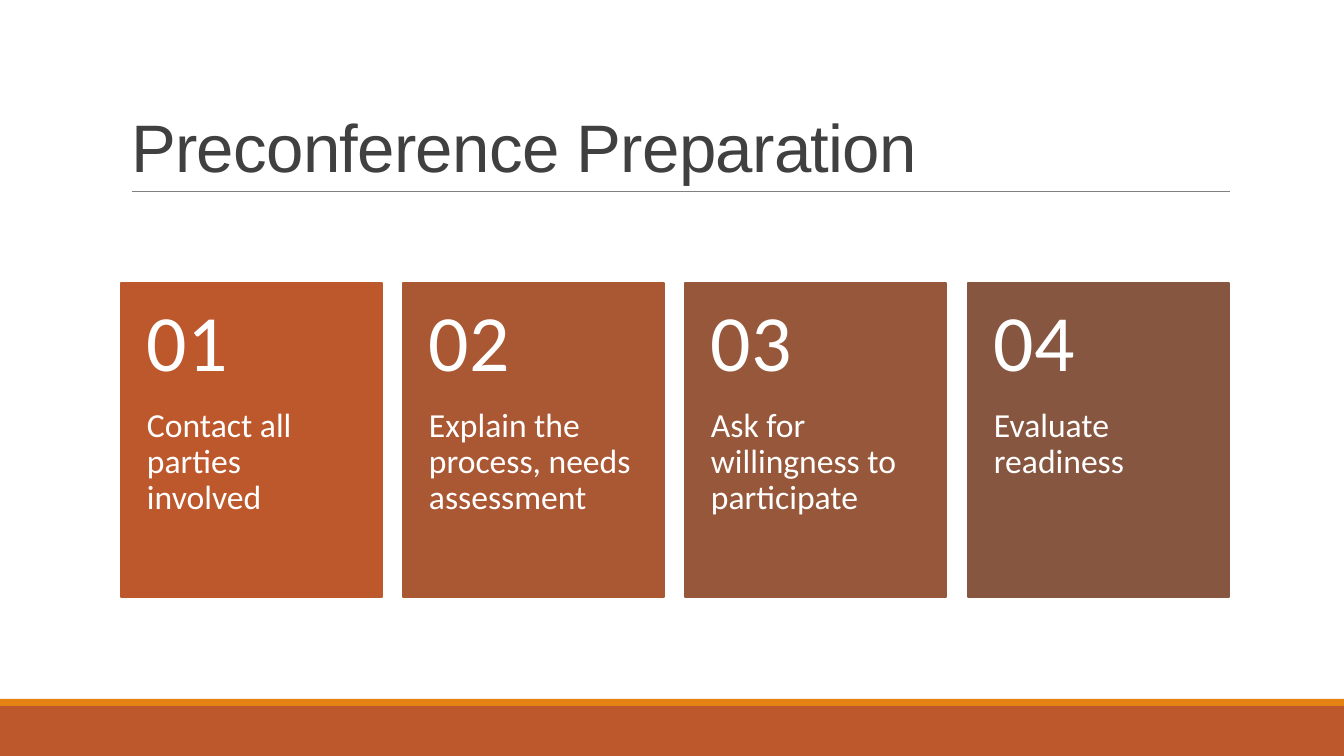
import pptx
import pptx.util
import pptx.dml.color
import pptx.enum.shapes
import pptx.enum.text
import pptx.oxml.ns
import lxml.etree

SLIDE_W, SLIDE_H = 1344, 756
EMU_PER_PX = 12192000 / SLIDE_W
ANCHOR = pptx.enum.text.MSO_ANCHOR
STEPS = [
    ("Contact all parties involved", "BD582C"),
    ("Explain the process, needs assessment", "AA5834"),
    ("Ask for willingness to participate", "97573A"),
    ("Evaluate readiness", "865640"),
]


def px(n):
    """Turn pixels into EMU."""
    return pptx.util.Emu(round(n * EMU_PER_PX))


def rgb(code):
    """Turn a hex string into a colour."""
    return pptx.dml.color.RGBColor.from_string(code)


def add_rect(s, box, color, line_pt=0):
    """Add a filled rectangle, outlined in its own colour if line_pt is set."""
    kind = pptx.enum.shapes.MSO_SHAPE.RECTANGLE
    sp = s.shapes.add_shape(kind, *map(px, box))
    sp.shadow.inherit = False
    sp.fill.solid()
    sp.fill.fore_color.rgb = rgb(color)
    if line_pt:
        sp.line.color.rgb = rgb(color)
        sp.line.width = pptx.util.Pt(line_pt)
    else:
        sp.line.fill.background()


def add_rule(s, x1, x2, y, color):
    """Add a thin horizontal line."""
    kind = pptx.enum.shapes.MSO_CONNECTOR.STRAIGHT
    cn = s.shapes.add_connector(kind, px(x1), px(y), px(x2), px(y))
    cn.line.color.rgb = rgb(color)
    cn.line.width = pptx.util.Pt(0.5)
    lxml.etree.SubElement(cn._element.spPr, pptx.oxml.ns.qn("a:effectLst"))


def write(tf, text, size, font, color, spacing):
    """Write one left-aligned run and return it."""
    tf.word_wrap = True
    tf.auto_size = pptx.enum.text.MSO_AUTO_SIZE.NONE
    p = tf.paragraphs[0]
    p.alignment = pptx.enum.text.PP_ALIGN.LEFT
    p.line_spacing = spacing
    r = p.add_run()
    r.text = text
    r.font.size = pptx.util.Pt(size)
    r.font.name = font
    r.font.color.rgb = rgb(color)
    return r


def set_title(s, text):
    """Place and fill the title placeholder."""
    sp = s.shapes.title
    sp.left, sp.top, sp.width, sp.height = map(px, (121, 31, 1109, 160))
    tf = sp.text_frame
    tf.vertical_anchor = ANCHOR.BOTTOM
    r = write(tf, text, 48, "Arial", "404040", 0.85)
    r._r.get_or_add_rPr().set("spc", "-50")


def add_label(s, box, text, size, anchor, top, bottom):
    """Add white card text with the given top and bottom insets."""
    tf = s.shapes.add_textbox(*map(px, box)).text_frame
    tf.vertical_anchor = anchor
    tf.margin_left = tf.margin_right = px(26)
    tf.margin_top, tf.margin_bottom = px(top), px(bottom)
    write(tf, text, size, "Calibri", "FFFFFF", 0.9)


def add_card(s, x, number, text, color):
    """Add one numbered step card."""
    add_rect(s, (x, 283, 261, 314), color, 1.25)
    add_label(s, (x, 408, 261, 189), text, 24, ANCHOR.TOP, 0, 36)
    add_label(s, (x, 283, 261, 126), f"{number:02d}", 57, ANCHOR.MIDDLE, 18, 18)


def main():
    """Build and save the slide."""
    prs = pptx.Presentation()
    prs.slide_width, prs.slide_height = px(SLIDE_W), px(SLIDE_H)
    s = prs.slides.add_slide(prs.slide_layouts[5])
    add_rect(s, (0, 706, SLIDE_W, 50), "BD582C")
    add_rect(s, (0, 699, SLIDE_W, 7), "E48312")
    add_rule(s, 132, 1230, 191, "808080")
    set_title(s, "Preconference Preparation")
    for i, (text, color) in enumerate(STEPS):
        add_card(s, 121 + i * 847 // 3, i + 1, text, color)
    prs.save("out.pptx")


if __name__ == "__main__":
    main()
